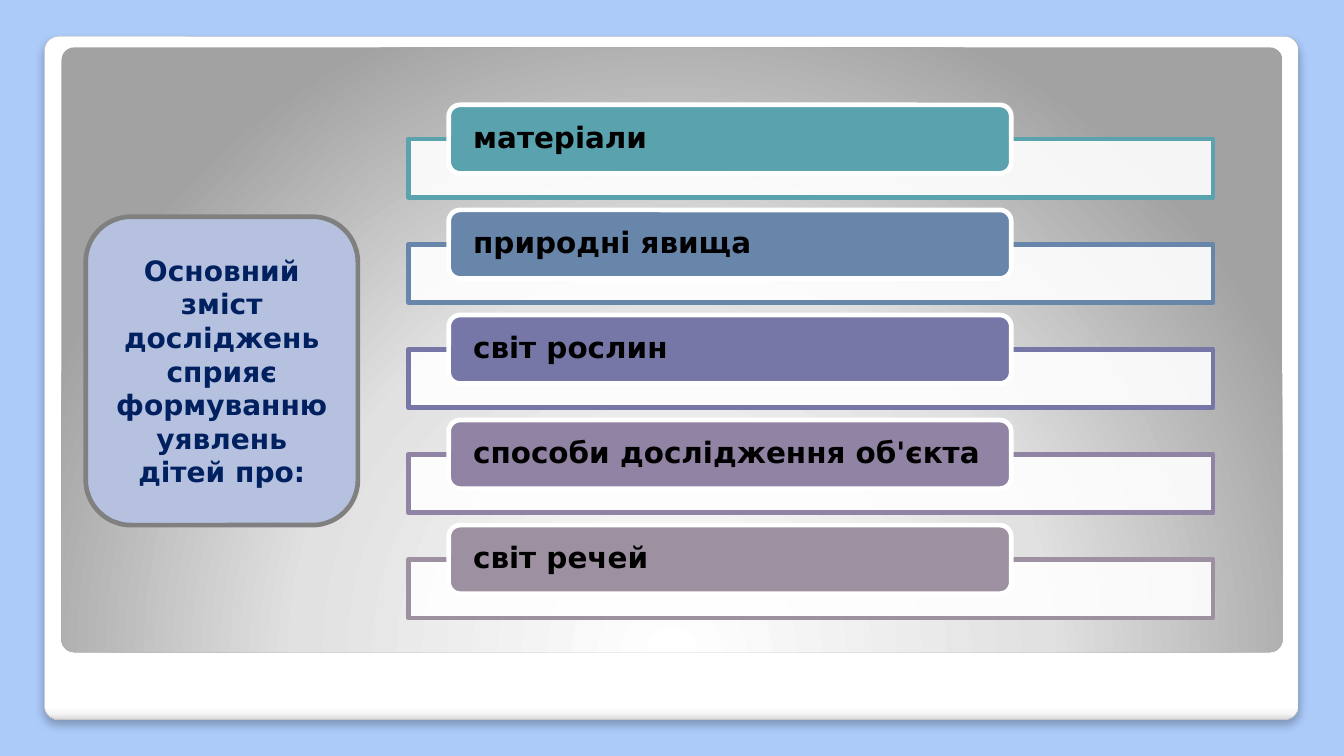
from lxml import etree
from pptx import Presentation
from pptx import util as u
from pptx.dml.color import RGBColor
from pptx.enum import shapes, text
from pptx.oxml import ns, parse_xml

theme = {
    "back": "ACCBF9", "white": "FFFFFF", "edge": "A4A4A4",
    "call": "B5C1DF", "rim": "808080", "navy": "002060", "ink": "000000",
    "rows": ["5AA2AE", "6885AA", "7677A6", "9083A3", "9D90A0"],
    "frame": [(0, "FFFFFF"), (98, "FFFFFF"), (99, "F7F7F7"), (100, "DADADA")],
    "panel": [(0, "FFFFFF"), (55, "E1E1E1"), (100, "A2A2A2")],
    "font": "DejaVu Sans", "label": 21, "title": 20, "line": 3.35,
}
RECT = shapes.MSO_SHAPE.RECTANGLE
ROUND = shapes.MSO_SHAPE.ROUNDED_RECTANGLE

deck = Presentation()
deck.slide_width, deck.slide_height = u.Inches(13.33), u.Inches(7.5)
slide = deck.slides.add_slide(deck.slide_layouts[6])
slide.background.fill.solid()
slide.background.fill.fore_color.rgb = RGBColor.from_string(theme["back"])


def add_box(kind, place, fill=None, line=None, width=theme["line"]):
    box = slide.shapes.add_shape(kind, *map(u.Inches, place))
    box.shadow.inherit = False
    if fill:
        box.fill.solid()
        box.fill.fore_color.rgb = RGBColor.from_string(fill)
    if line:
        box.line.color.rgb = RGBColor.from_string(line)
        box.line.width = u.Pt(width)
    else:
        box.line.fill.background()
    return box


def add_text(box, words, align, size, color, inset, space):
    frame = box.text_frame
    side, top = map(u.Inches, inset)
    form = {"word_wrap": True, "vertical_anchor": text.MSO_ANCHOR.MIDDLE,
            "margin_left": side, "margin_right": side,
            "margin_top": top, "margin_bottom": top}
    for name, value in form.items():
        setattr(frame, name, value)
    para = frame.paragraphs[0]
    para.alignment, para.line_spacing = align, space
    run = para.add_run()
    run.text = words
    form = {"name": theme["font"], "size": u.Pt(size), "bold": True}
    for name, value in form.items():
        setattr(run.font, name, value)
    run.font.color.rgb = RGBColor.from_string(color)


# White frame and grey panel, each with its gradient
frame = add_box(ROUND, (0.44, 0.36, 12.44, 6.78), line=theme["edge"], width=0.16)
panel = add_box(ROUND, (0.61, 0.47, 12.11, 6))
linear = '<a:lin ang="5400000" scaled="0"/>'
radial = ('<a:path path="circle"><a:fillToRect l="50000" t="175000" '
          'r="50000" b="-75000"/></a:path>')
for box, stops, shade in ((frame, theme["frame"], linear),
                          (panel, theme["panel"], radial)):
    box.adjustments[0] = 0.021
    marks = "".join(f'<a:gs pos="{pos * 1000}"><a:srgbClr val="{color}"/></a:gs>'
                    for pos, color in stops)
    grad = parse_xml(f'<a:gradFill {ns.nsdecls("a")} rotWithShape="1">'
                     f'<a:gsLst>{marks}</a:gsLst>{shade}</a:gradFill>')
    box.element.spPr.find(ns.qn("a:prstGeom")).addnext(grad)

# Soft shadow below the frame
cast = etree.SubElement(frame.element.spPr.find(ns.qn("a:effectLst")),
                        ns.qn("a:outerShdw"), blurRad=str(u.Pt(6)),
                        dist=str(u.Pt(4)), dir="5400000", algn="t", rotWithShape="0")
tint = etree.SubElement(cast, ns.qn("a:srgbClr"), val=theme["ink"])
etree.SubElement(tint, ns.qn("a:alpha"), val="25000")

# List rows: an outlined bar with a label pill on top
labels = ["матеріали", "природні явища", "світ рослин",
          "способи дослідження об'єкта", "світ речей"]
pitch = 4.17 / 4
for row, (label, color) in enumerate(zip(labels, theme["rows"])):
    top = 1.38 + row * pitch
    bar = add_box(RECT, (4.05, top, 7.98, 0.58), theme["white"], color)
    tint = bar.element.spPr.find(ns.qn("a:solidFill"))[0]
    etree.SubElement(tint, ns.qn("a:alpha"), val="90000")
    pill = add_box(ROUND, (4.45, top - 0.34, 5.58, 0.68), color, theme["white"])
    add_text(pill, label, text.PP_ALIGN.LEFT, theme["label"], theme["ink"],
             (0.21, 0), 0.9)

# Callout on the left
call = add_box(ROUND, (0.85, 2.15, 2.7, 3.06), theme["call"], theme["rim"])
add_text(call, "Основний зміст досліджень сприяє формуванню уявлень дітей про:",
         text.PP_ALIGN.CENTER, theme["title"], theme["navy"], (0.1, 0.05), 1.0)

deck.save("out.pptx")
